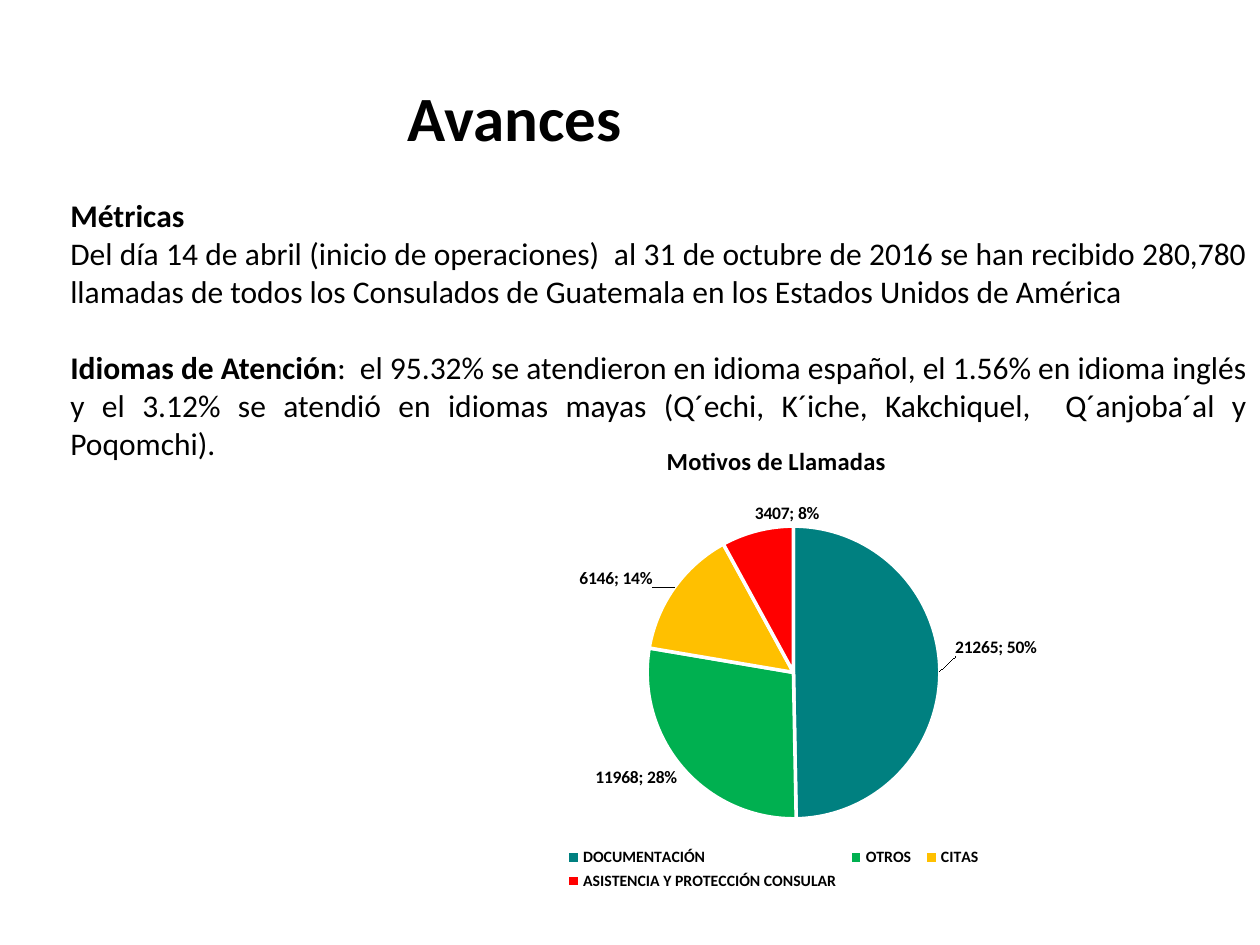
import pptx
import pptx.chart.data
import pptx.dml.color
import pptx.enum.chart
import pptx.enum.text
import pptx.oxml
import pptx.oxml.ns
import pptx.util
from pptx.util import Inches, Pt

RGB = pptx.dml.color.RGBColor
BLACK = RGB(0, 0, 0)
WHITE = RGB(255, 255, 255)
TEAL = RGB(0, 0x80, 0x80)
GREEN = RGB(0, 0xB0, 0x50)
AMBER = RGB(0xFF, 0xC0, 0)
RED = RGB(0xFF, 0, 0)
FONT = "Calibri"
ALIGN = pptx.enum.text.PP_ALIGN

HEADING = [(0, [("Avances", True)])]
# (space before in points, [(text, bold), ...])
METRICS = [
    (0, [("Métricas", True)]),
    (0, [("Del día 14 de abril (inicio de operaciones)  al 31 de octubre de 2016 "
          "se han recibido 280,780 llamadas de todos los Consulados de Guatemala "
          "en los Estados Unidos de América", False)]),
    (22, [("Idiomas de Atención", True),
          (":  el 95.32% se atendieron en idioma español, el 1.56% en idioma inglés "
           "y el 3.12% se atendió en idiomas mayas (Q´echi, K´iche, Kakchiquel,  "
           "Q´anjoba´al y Poqomchi).", False)]),
]
CHART_TITLE = "Motivos de Llamadas"
# (reason, calls, colour, label shift as a share of the chart size)
REASONS = [
    ("DOCUMENTACIÓN", 21265, TEAL, (0.01, -0.05)),
    ("OTROS", 11968, GREEN, (0, -0.01)),
    ("CITAS", 6146, AMBER, (-0.02, 0.01)),
    ("ASISTENCIA Y PROTECCIÓN CONSULAR", 3407, RED, (0.08, 0)),
]


def style(font, size, bold=True):
    font.name, font.size, font.bold = FONT, Pt(size), bold
    font.color.rgb = BLACK


def add_text(slide, box, paragraphs, size, align):
    frame = slide.shapes.add_textbox(*map(Inches, box)).text_frame
    frame.word_wrap = True
    for i, (before, runs) in enumerate(paragraphs):
        paragraph = frame.paragraphs[0] if i == 0 else frame.add_paragraph()
        paragraph.alignment = align
        paragraph.space_before = Pt(before)
        for text, bold in runs:
            run = paragraph.add_run()
            run.text = text
            style(run.font, size, bold)


def chart_xml(tag, value=None, children=""):
    attribute = "" if value is None else f' val="{value}"'
    return pptx.oxml.parse_xml(
        f'<c:{tag} {pptx.oxml.ns.nsdecls("c")}{attribute}>{children}</c:{tag}>')


def set_layout(element, after, **parts):
    """Place a chart part by hand, right after its child named by `after`."""
    for old in element.findall(pptx.oxml.ns.qn("c:layout")):
        element.remove(old)
    children = "".join(f'<c:{tag} val="{value}"/>' for tag, value in parts.items())
    layout = chart_xml("layout", children=f"<c:manualLayout>{children}</c:manualLayout>")
    if after is None:
        element.insert(0, layout)
    else:
        element.find(pptx.oxml.ns.qn(after)).addnext(layout)


def add_reasons_chart(slide):
    data = pptx.chart.data.CategoryChartData()
    data.categories = [reason[0] for reason in REASONS]
    data.add_series("Series 1", [reason[1] for reason in REASONS])
    chart = slide.shapes.add_chart(
        pptx.enum.chart.XL_CHART_TYPE.PIE,
        Inches(2.98), Inches(3.3), Inches(6.32), Inches(3.81), data).chart
    style(chart.font, 10, False)

    chart.has_title = True
    title_run = chart.chart_title.text_frame.paragraphs[0].add_run()
    title_run.text = CHART_TITLE
    style(title_run.font, 14)
    chart.chart_title.include_in_layout = False
    set_layout(chart.chart_title._element, "c:tx",
               xMode="edge", yMode="edge", x=0.36, y=0.05)

    chart.has_legend = True
    chart.legend.position = pptx.enum.chart.XL_LEGEND_POSITION.BOTTOM
    chart.legend.include_in_layout = False
    style(chart.legend.font, 9)
    set_layout(chart.legend._element, "c:legendPos",
               xMode="edge", yMode="edge", x=0.23, y=0.89, w=0.54, h=0.11)

    plot = chart.plots[0]
    plot.vary_by_categories = True
    set_layout(chart._chartSpace.chart.plotArea, None, layoutTarget="inner",
               xMode="edge", yMode="edge", x=0.34, y=0.23, w=0.37, h=0.61)

    series = plot.series[0]
    outside = pptx.enum.chart.XL_LABEL_POSITION.OUTSIDE_END
    labels = series.data_labels
    labels.show_value = labels.show_percentage = True
    labels.position = outside
    style(labels.font, 10)
    for i, (_, _, colour, (dx, dy)) in enumerate(REASONS):
        point = series.points[i]
        point.format.fill.solid()
        point.format.fill.fore_color.rgb = colour
        point.format.line.color.rgb = WHITE
        point.format.line.width = Pt(2)
        label = point.data_label
        style(label.font, 10)
        label.position = outside
        element = labels._element.findall(pptx.oxml.ns.qn("c:dLbl"))[i]
        element.find(pptx.oxml.ns.qn("c:showPercent")).set("val", "1")
        element.append(chart_xml("separator"))
        element[-1].text = "; "
        set_layout(element, "c:idx", x=dx, y=dy)


def main():
    deck = pptx.Presentation()
    deck.slide_width, deck.slide_height = Inches(10), Inches(7.5)
    slide = deck.slides.add_slide(deck.slide_layouts[6])
    add_text(slide, (2.8, 0.57, 2.57, 0.71), HEADING, 36, ALIGN.CENTER)
    add_text(slide, (0.46, 1.51, 9.54, 2.2), METRICS, 18, ALIGN.JUSTIFY)
    add_reasons_chart(slide)
    deck.save("out.pptx")


if __name__ == "__main__":
    main()
